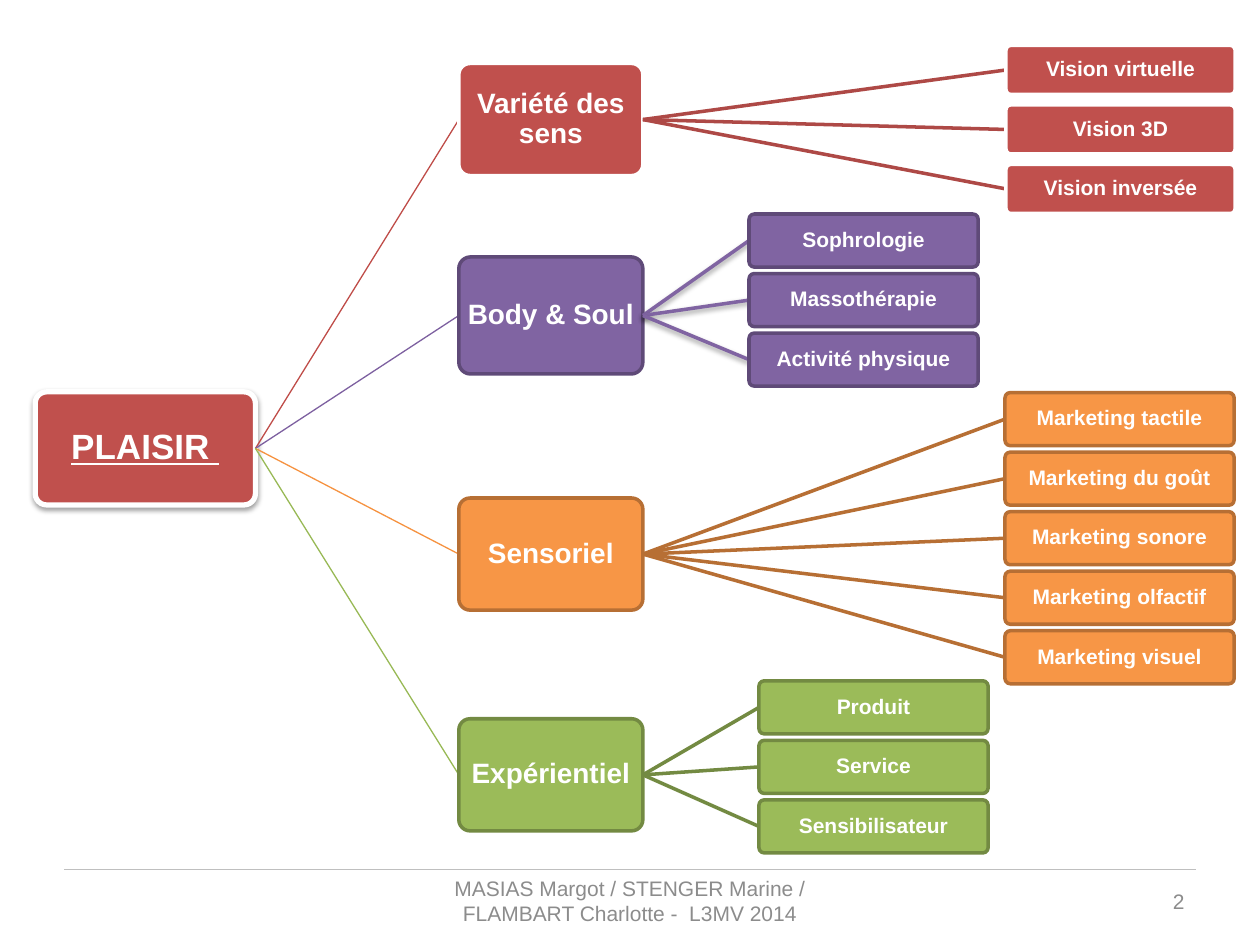
from dataclasses import dataclass

from lxml import etree
from pptx import Presentation
from pptx.dml.color import RGBColor
from pptx.enum.shapes import MSO_CONNECTOR, MSO_SHAPE
from pptx.enum.text import MSO_ANCHOR, PP_ALIGN
from pptx.oxml.ns import qn
from pptx.util import Cm, Pt

ROUNDED = MSO_SHAPE.ROUNDED_RECTANGLE
STRAIGHT = MSO_CONNECTOR.STRAIGHT
MIDDLE = MSO_ANCHOR.MIDDLE
CENTER, RIGHT = PP_ALIGN.CENTER, PP_ALIGN.RIGHT


@dataclass(frozen=True)
class Theme:
    font: str = "Arial"
    white: str = "FFFFFF"
    red: str = "C0504D"
    purple: str = "8064A2"
    orange: str = "F79646"
    green: str = "9BBB59"
    red_link: str = "BF4C48"
    purple_link: str = "7D60A0"
    orange_link: str = "F69240"
    green_link: str = "98B955"
    red_dark: str = "AE4946"
    purple_dark: str = "5F4A78"
    orange_dark: str = "B76F34"
    green_dark: str = "738A42"
    footer: str = "8C8C8C"
    rule: str = "BFBFBF"
    shadow: str = "000000"
    root_size: int = 20
    branch_size: int = 16
    leaf_size: int = 12
    footer_size: int = 12


@dataclass(frozen=True)
class Branch:
    label: str
    fill: str
    border: str
    root_link: str
    leaf_link: str
    center: float
    height: float
    leaf_left: float
    first_leaf: float
    leaf_height: float
    leaves: tuple
    shadowed: bool = False


class MindMap:
    def __init__(self, slide, theme):
        self.slide = slide
        self.theme = theme

    def add_shadow(self, effects):
        outer = etree.SubElement(
            effects, qn("a:outerShdw"), blurRad=str(Pt(3.1)), dist=str(Pt(1.6)),
            dir="5400000", rotWithShape="0")
        color = etree.SubElement(outer, qn("a:srgbClr"), val=self.theme.shadow)
        etree.SubElement(color, qn("a:alpha"), val="38000")

    def add_text(self, paragraph, text, size, color, bold=False, underline=False):
        run = paragraph.add_run()
        run.text = text
        run.font.name = self.theme.font
        run.font.size = Pt(size)
        run.font.bold = bold
        run.font.underline = underline
        run.font.color.rgb = RGBColor.from_string(color)

    def box(self, label, left, center, width, height, fill, border, size,
            weight=2, underline=False, shadowed=False):
        node = self.slide.shapes.add_shape(
            ROUNDED, Cm(left), Cm(center - height / 2), Cm(width), Cm(height))
        node.adjustments[0] = 0.1
        node.fill.solid()
        node.fill.fore_color.rgb = RGBColor.from_string(fill)
        node.line.color.rgb = RGBColor.from_string(border)
        node.line.width = Pt(weight)
        node.shadow.inherit = False
        if shadowed:
            self.add_shadow(node._element.spPr.find(qn("a:effectLst")))
        frame = node.text_frame
        frame.word_wrap = True
        frame.vertical_anchor = MIDDLE
        frame.margin_left = frame.margin_right = Cm(0.03)
        frame.margin_top = frame.margin_bottom = Cm(0.03)
        paragraph = frame.paragraphs[0]
        paragraph.alignment = CENTER
        paragraph.line_spacing = 0.9
        self.add_text(paragraph, label, size, self.theme.white, True, underline)

    def link(self, x1, y1, x2, y2, color, weight, shadowed=False):
        link = self.slide.shapes.add_connector(
            STRAIGHT, Cm(x1), Cm(y1), Cm(x2), Cm(y2))
        link.line.color.rgb = RGBColor.from_string(color)
        link.line.width = Pt(weight)
        effects = etree.SubElement(link._element.spPr, qn("a:effectLst"))
        if shadowed:
            self.add_shadow(effects)

    def footer_text(self, text, left, width, alignment):
        note = self.slide.shapes.add_textbox(Cm(left), Cm(17.65), Cm(width), Cm(1.02))
        note.text_frame.word_wrap = True
        note.text_frame.vertical_anchor = MIDDLE
        paragraph = note.text_frame.paragraphs[0]
        paragraph.alignment = alignment
        self.add_text(paragraph, text, self.theme.footer_size, self.theme.footer)


ROOT_LEFT, ROOT_CENTER, ROOT_WIDTH, ROOT_HEIGHT = 0.71, 9.04, 4.44, 2.28
BRANCH_LEFT, BRANCH_WIDTH = 9.25, 3.71
LEAF_WIDTH, LEAF_PITCH = 4.62, 1.2


def main():
    theme = Theme()
    branches = (
        Branch("Variété des sens", theme.red, theme.white, theme.red_link,
               theme.red_dark, 2.41, 2.26, 20.28, 1.41, 0.99,
               ("Vision virtuelle", "Vision 3D", "Vision inversée")),
        Branch("Body & Soul", theme.purple, theme.purple_dark, theme.purple_link,
               theme.purple, 6.36, 2.36, 15.1, 4.85, 1.07,
               ("Sophrologie", "Massothérapie", "Activité physique"), True),
        Branch("Sensoriel", theme.orange, theme.orange_dark, theme.orange_link,
               theme.orange_dark, 11.17, 2.26, 20.26, 8.45, 1.07,
               ("Marketing tactile", "Marketing du goût", "Marketing sonore",
                "Marketing olfactif", "Marketing visuel")),
        Branch("Expérientiel", theme.green, theme.green_dark, theme.green_link,
               theme.green_dark, 15.62, 2.26, 15.3, 14.26, 1.07,
               ("Produit", "Service", "Sensibilisateur")),
    )

    deck = Presentation()
    deck.slide_width, deck.slide_height = Cm(25.4), Cm(19.05)
    mind_map = MindMap(deck.slides.add_slide(deck.slide_layouts[6]), theme)

    mind_map.link(1.3, 17.53, 24.1, 17.53, theme.rule, 0.75)
    mind_map.footer_text(
        "MASIAS Margot / STENGER Marine / FLAMBART Charlotte -  L3MV 2014",
        8.68, 8.04, CENTER)
    mind_map.footer_text("2", 18.2, 5.93, RIGHT)

    mind_map.box("PLAISIR ", ROOT_LEFT, ROOT_CENTER, ROOT_WIDTH, ROOT_HEIGHT,
                 theme.red, theme.white, theme.root_size, 3, True, True)
    for branch in branches:
        mind_map.link(ROOT_LEFT + ROOT_WIDTH, ROOT_CENTER, BRANCH_LEFT,
                      branch.center, branch.root_link, 0.75)
        mind_map.box(branch.label, BRANCH_LEFT, branch.center, BRANCH_WIDTH,
                     branch.height, branch.fill, branch.border, theme.branch_size)
        for position, leaf in enumerate(branch.leaves):
            leaf_center = branch.first_leaf + position * LEAF_PITCH
            mind_map.link(BRANCH_LEFT + BRANCH_WIDTH, branch.center,
                          branch.leaf_left, leaf_center, branch.leaf_link, 2,
                          branch.shadowed)
            mind_map.box(leaf, branch.leaf_left, leaf_center, LEAF_WIDTH,
                         branch.leaf_height, branch.fill, branch.border,
                         theme.leaf_size)

    deck.save("out.pptx")


if __name__ == "__main__":
    main()
